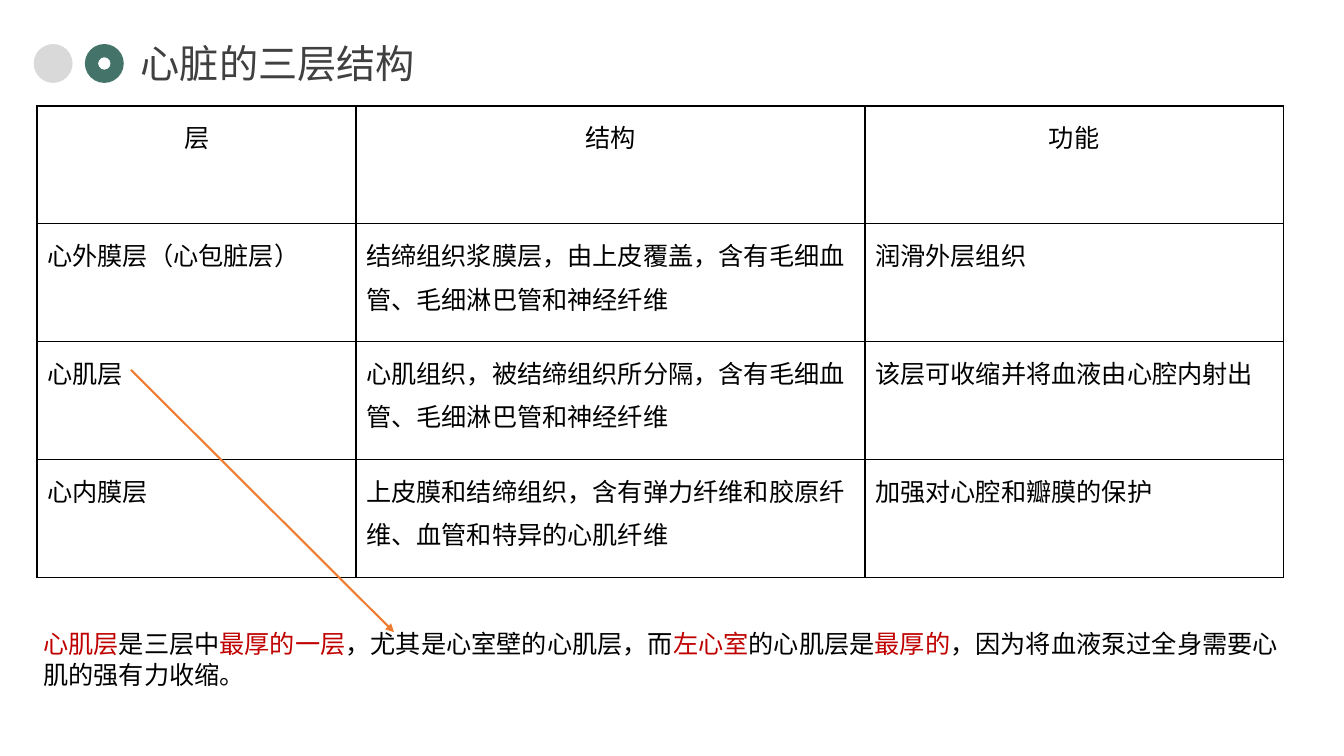
from typing import NamedTuple

import pptx
import pptx.dml.color
import pptx.enum.shapes
import pptx.enum.text
import pptx.oxml
import pptx.oxml.ns
import pptx.util
from pptx.util import Cm, Pt

ALIGN = pptx.enum.text.PP_ALIGN
SHAPE = pptx.enum.shapes.MSO_SHAPE
FONT = "Arial"
COLORS = {
    "black": "000000",
    "title": "404040",
    "grey": "D9D9D9",
    "green": "447469",
    "red": "C00000",
    "orange": "ED7D31",
}


class Dot(NamedTuple):
    left: float
    kind: int
    color: str


class Run(NamedTuple):
    text: str
    color: str = "black"


DOTS = [Dot(0.85, SHAPE.OVAL, "grey"), Dot(2.14, SHAPE.DONUT, "green")]
COL_WIDTHS = [8.03, 12.83, 10.54]
ROW_HEIGHT = 2.97
ROWS = [
    ["层", "结构", "功能"],
    ["心外膜层（心包脏层）",
     "结缔组织浆膜层，由上皮覆盖，含有毛细血管、毛细淋巴管和神经纤维",
     "润滑外层组织"],
    ["心肌层",
     "心肌组织，被结缔组织所分隔，含有毛细血管、毛细淋巴管和神经纤维",
     "该层可收缩并将血液由心腔内射出"],
    ["心内膜层",
     "上皮膜和结缔组织，含有弹力纤维和胶原纤维、血管和特异的心肌纤维",
     "加强对心腔和瓣膜的保护"],
]
SUMMARY = [
    Run("心肌层", "red"),
    Run("是三层中"),
    Run("最厚的一层", "red"),
    Run("，尤其是心室壁的心肌层，而"),
    Run("左心室", "red"),
    Run("的心肌层是"),
    Run("最厚的", "red"),
    Run("，因为将血液泵过全身需要心肌的强有力收缩。"),
]


def rgb(name: str) -> pptx.dml.color.RGBColor:
    return pptx.dml.color.RGBColor.from_string(COLORS[name])


def add_dot(s, dot: Dot) -> None:
    sp = s.shapes.add_shape(dot.kind, Cm(dot.left), Cm(1.11), Cm(0.98), Cm(0.98))
    sp.shadow.inherit = False
    sp.fill.solid()
    sp.fill.fore_color.rgb = rgb(dot.color)
    sp.line.fill.background()
    if dot.kind == SHAPE.DONUT:
        sp.adjustments[0] = 0.34


def add_text(s, left: float, top: float, width: float, height: float,
             runs: list[Run], size: int, align: int, wrap: bool) -> None:
    tf = s.shapes.add_textbox(Cm(left), Cm(top), Cm(width), Cm(height)).text_frame
    tf.word_wrap = wrap
    p = tf.paragraphs[0]
    p.alignment = align
    p.font.size, p.font.name = Pt(size), FONT
    for run in runs:
        r = p.add_run()
        r.text = run.text
        r.font.color.rgb = rgb(run.color)


def set_borders(cell, row: int, col: int) -> None:
    """Thin black rules, heavier along the table's left and top edges."""
    widths = {"lnL": 1 if col else 1.5, "lnR": 1, "lnT": 1 if row else 1.5, "lnB": 1}
    tc_pr = cell._tc.get_or_add_tcPr()
    for i, (tag, width) in enumerate(widths.items()):
        tc_pr.insert(i, pptx.oxml.parse_xml(
            f'<a:{tag} {pptx.oxml.ns.nsdecls("a")} w="{int(Pt(width))}"><a:solidFill>'
            f'<a:srgbClr val="{COLORS["black"]}"/></a:solidFill></a:{tag}>'))


def add_layer_table(s) -> None:
    table = s.shapes.add_table(
        len(ROWS), len(COL_WIDTHS), Cm(0.94), Cm(2.67),
        Cm(sum(COL_WIDTHS)), Cm(ROW_HEIGHT * len(ROWS))).table
    table.first_row = table.horz_banding = False
    for column, width in zip(table.columns, COL_WIDTHS):
        column.width = Cm(width)
    for i, texts in enumerate(ROWS):
        table.rows[i].height = Cm(ROW_HEIGHT)
        for j, text in enumerate(texts):
            cell = table.cell(i, j)
            cell.fill.background()
            set_borders(cell, i, j)
            cell.text = text
            p = cell.text_frame.paragraphs[0]
            p.alignment = ALIGN.LEFT if i else ALIGN.CENTER
            p.line_spacing = 1.2
            p.font.size, p.font.name = Pt(18), FONT
            p.font.color.rgb = rgb("black")


def add_arrow(s, x1: float, y1: float, x2: float, y2: float) -> None:
    line = s.shapes.add_connector(
        pptx.enum.shapes.MSO_CONNECTOR.STRAIGHT, Cm(x1), Cm(y1), Cm(x2), Cm(y2))
    line.line.color.rgb = rgb("orange")
    line.line.width = Pt(1.5)
    ns = pptx.oxml.ns.nsdecls("a")
    line.line._get_or_add_ln().append(
        pptx.oxml.parse_xml(f'<a:tailEnd {ns} type="triangle"/>'))
    line._element.spPr.append(pptx.oxml.parse_xml(f"<a:effectLst {ns}/>"))


def main() -> None:
    prs = pptx.Presentation()
    prs.slide_width, prs.slide_height = Cm(33.87), Cm(19.05)
    s = prs.slides.add_slide(prs.slide_layouts[6])

    # Heading
    for dot in DOTS:
        add_dot(s, dot)
    add_text(s, 3.3, 0.86, 8.23, 1.45, [Run("心脏的三层结构", "title")],
             28, ALIGN.JUSTIFY, True)

    # Layers of the heart wall
    add_layer_table(s)

    # Remark on the myocardium
    add_text(s, 0.84, 15.72, 31.7, 1.8, SUMMARY, 18, ALIGN.LEFT, True)
    add_arrow(s, 3.3, 9.32, 9.93, 15.93)

    prs.save("out.pptx")


if __name__ == "__main__":
    main()
